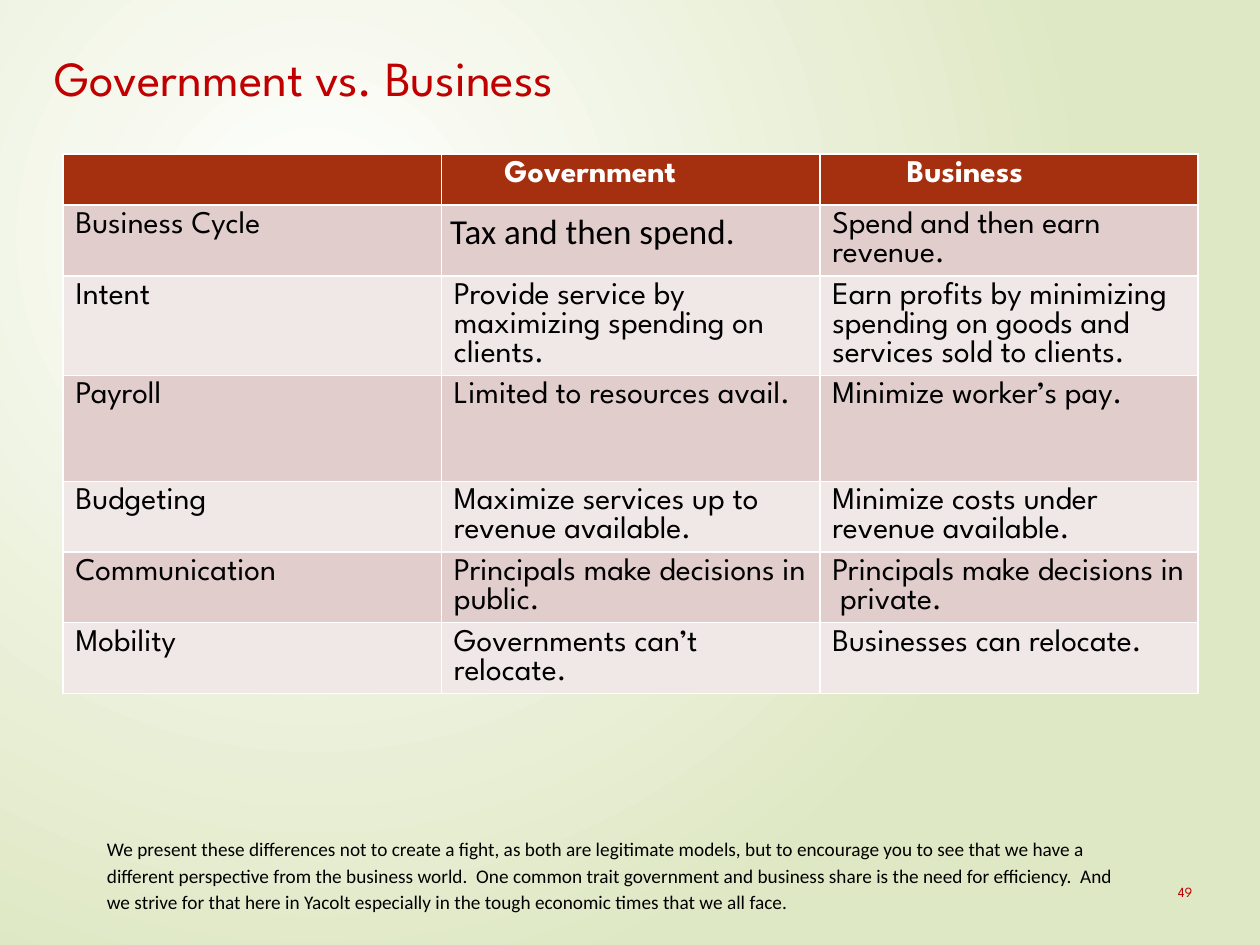
from lxml.etree import SubElement
from pptx import Presentation
from pptx.dml.color import RGBColor
from pptx.enum.text import MSO_ANCHOR, PP_ALIGN
from pptx.oxml.ns import qn
from pptx.util import Inches, Pt

WIDTH, HEIGHT = Inches(10), Inches(7.5)
HEADING_FONT, NOTE_FONT = "League Spartan", "Calibri"
RED, BLACK, WHITE = "C00000", "000000", "FFFFFF"
HEADER_FILL, BAND_FILLS = "A53010", ("E1CDCC", "F0E8E7")
HEADER_INDENTS = (0.1, 0.5, 0.69)
ROW_HEIGHTS = (0.33, 0.56, 0.79, 0.84, 0.56, 0.56, 0.56)
COMPARISON = (
    ("", "Government", "Business"),
    ("Business Cycle", "Tax and then spend.", "Spend and then earn revenue."),
    ("Intent", "Provide service by maximizing spending on clients.",
     "Earn profits by minimizing spending on goods and services sold to clients."),
    ("Payroll", "Limited to resources avail.", "Minimize worker’s pay."),
    ("Budgeting", "Maximize services up to revenue available.",
     "Minimize costs under revenue available."),
    ("Communication", "Principals make decisions in public.",
     "Principals make decisions in  private."),
    ("Mobility", "Governments can’t relocate.", "Businesses can relocate."),
)
CLOSING = (
    "We present these differences not to create a fight, as both are legitimate "
    "models, but to encourage you to see that we have a different perspective from "
    "the business world.  One common trait government and business share is the need "
    "for efficiency.  And we strive for that here in Yacolt especially in the tough "
    "economic times that we all face."
)


def color(value):
    return RGBColor.from_string(value)


def share(left, top, width, height):
    return (int(WIDTH * left), int(HEIGHT * top),
            int(WIDTH * width), int(HEIGHT * height))


def apply(target, formats):
    for attribute, value in formats.items():
        setattr(target, attribute, value)


def write(frame, text, size, font, ink, bold=False, **paragraph_format):
    paragraph = frame.paragraphs[0]
    apply(paragraph, {"alignment": PP_ALIGN.LEFT, **paragraph_format})
    run = paragraph.add_run()
    run.text = text
    apply(run.font, {"size": Pt(size), "name": font, "bold": bold})
    run.font.color.rgb = color(ink)


def paint_background(slide):
    fill = slide.background.fill
    fill.gradient()
    for stop, value in zip(fill.gradient_stops, (WHITE, "DFE8C4")):
        stop.color.rgb = color(value)
    gradient = slide.background._cSld.find(".//" + qn("a:gradFill"))
    gradient.remove(gradient.find(qn("a:lin")))
    circle = SubElement(gradient, qn("a:path"), {"path": "circle"})
    SubElement(circle, qn("a:fillToRect"),
               {"l": "50000", "t": "50000", "r": "100000", "b": "100000"})


def place_title(slide, box):
    title = slide.shapes.title
    apply(title, dict(zip(("left", "top", "width", "height"), box)))
    title.text_frame.vertical_anchor = MSO_ANCHOR.TOP
    write(title.text_frame, "Government vs. Business", 28, HEADING_FONT, RED)


def place_comparison(slide, box):
    table = slide.shapes.add_table(len(COMPARISON), len(COMPARISON[0]), *box).table
    for row, height in zip(table.rows, ROW_HEIGHTS):
        row.height = Inches(height)
    for row_index, entries in enumerate(COMPARISON):
        header = row_index == 0
        for column, text in enumerate(entries):
            cell = table.cell(row_index, column)
            cell.fill.solid()
            cell.fill.fore_color.rgb = color(
                HEADER_FILL if header else BAND_FILLS[(row_index - 1) % 2])
            if header:
                cell.margin_left = Inches(HEADER_INDENTS[column])
            if not text:
                continue
            if (row_index, column) == (1, 1):
                apply(cell, {"margin_left": Inches(0.07), "margin_right": Inches(0.07),
                             "margin_top": 0, "margin_bottom": 0})
                write(cell.text_frame, text, 20, NOTE_FONT, BLACK, line_spacing=1.15)
            else:
                write(cell.text_frame, text, 18, HEADING_FONT,
                      WHITE if header else BLACK, header)


def place_text(slide, box, text, size, font, ink, **paragraph_format):
    frame = slide.shapes.add_textbox(*box).text_frame
    frame.word_wrap = True
    write(frame, text, size, font, ink, **paragraph_format)


def main():
    deck = Presentation()
    apply(deck, {"slide_width": WIDTH, "slide_height": HEIGHT})
    slide = deck.slides.add_slide(deck.slide_layouts[5])
    paint_background(slide)
    place_title(slide, share(0.033, 0.044, 0.84, 0.2))
    place_comparison(slide, share(0.05, 0.163, 0.901, 0.56))
    place_text(slide, share(0.925, 0.928, 0.064, 0.053), "49", 8, HEADING_FONT, RED)
    place_text(slide, share(0.075, 0.876, 0.825, 0.099), CLOSING, 11, NOTE_FONT, BLACK,
               line_spacing=1.15, space_after=Pt(10))
    deck.save("out.pptx")


if __name__ == "__main__":
    main()
